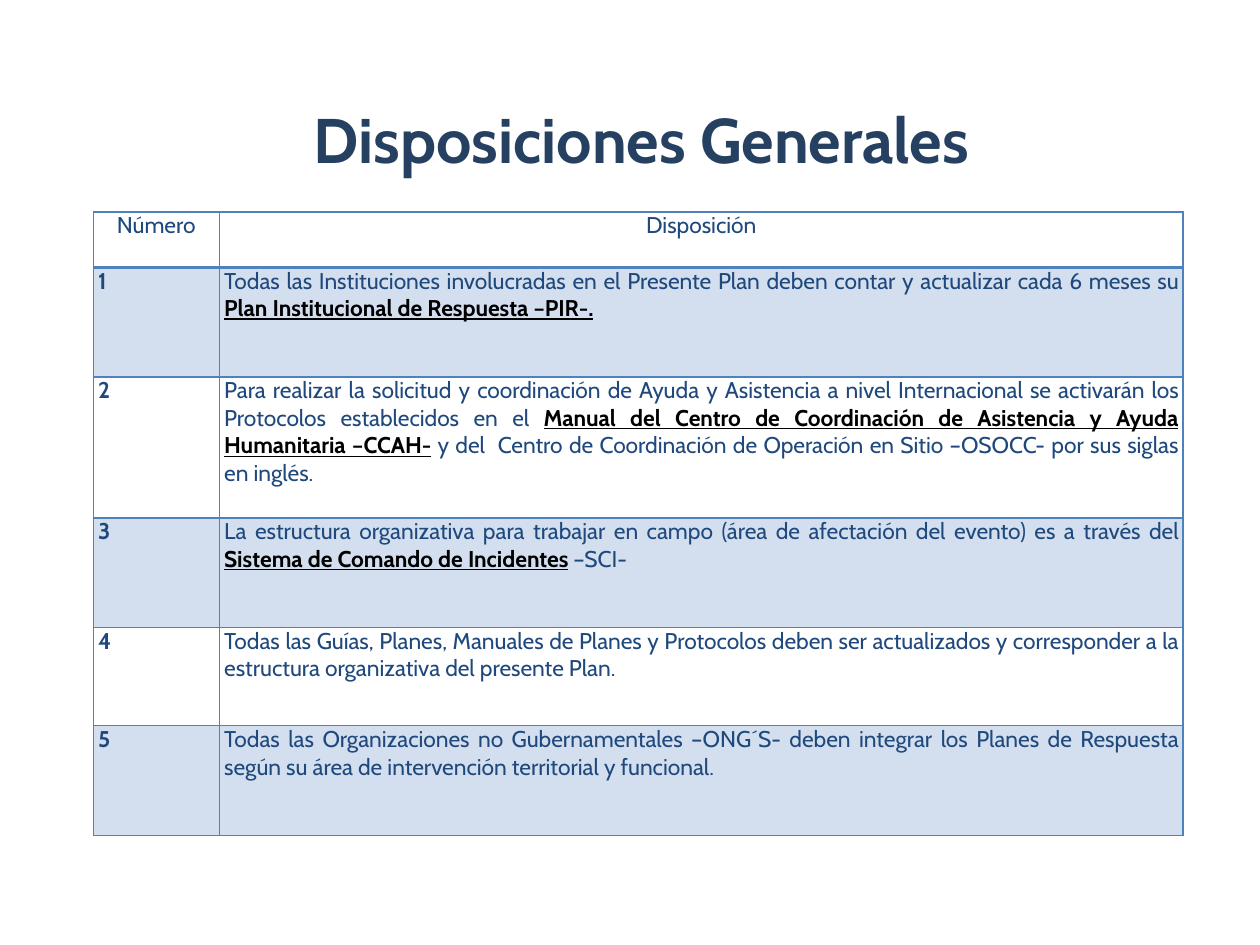
from dataclasses import dataclass

import lxml.etree
import pptx
import pptx.dml.color
import pptx.enum.text
import pptx.oxml.ns
import pptx.util

Cm = pptx.util.Cm
Pt = pptx.util.Pt
ALIGN = pptx.enum.text.PP_ALIGN
ANCHOR = pptx.enum.text.MSO_ANCHOR

COLORS = {
    "title": "254061",
    "text": "1F497D",
    "emphasis": "000000",
    "band": "D3DFEE",
    "border": "4F81BD",
}
FONT = "Cabin"
TITLE_FORMAT = {"name": FONT, "size": Pt(36), "bold": True}
PLAIN_FORMAT = {"name": FONT, "size": Pt(13), "bold": False}
NUMBER_FORMAT = PLAIN_FORMAT | {"bold": True}
EMPHASIS_FORMAT = NUMBER_FORMAT | {"underline": True}
CELL_FORMAT = {
    "margin_left": Cm(0.1),
    "margin_right": Cm(0.1),
    "margin_top": 0,
    "margin_bottom": 0,
    "vertical_anchor": ANCHOR.TOP,
}
COLUMN_WIDTHS = (2.54, 19.43)
HEADER = ("Número", "Disposición")
HEADER_HEIGHT = 1.12
THIN, THICK = Pt(1), Pt(2.25)


@dataclass(frozen=True)
class Provision:
    height: float
    before: str
    emphasis: str = ""
    after: str = ""


PROVISIONS = (
    Provision(
        2.21,
        "Todas las Instituciones involucradas en el Presente Plan deben contar "
        "y actualizar cada 6 meses su ",
        "Plan Institucional de Respuesta –PIR-.",
    ),
    Provision(
        2.84,
        "Para realizar la solicitud y coordinación de Ayuda y Asistencia a nivel "
        "Internacional se activarán los Protocolos establecidos en el ",
        "Manual del Centro de Coordinación de Asistencia y Ayuda Humanitaria –CCAH-",
        " y del  Centro de Coordinación de Operación en Sitio –OSOCC- por sus siglas "
        "en inglés.",
    ),
    Provision(
        2.21,
        "La estructura organizativa para trabajar en campo (área de afectación del "
        "evento) es a través del ",
        "Sistema de Comando de Incidentes",
        " –SCI-",
    ),
    Provision(
        1.98,
        "Todas las Guías, Planes, Manuales de Planes y Protocolos deben ser "
        "actualizados y corresponder a la estructura organizativa del presente Plan.",
    ),
    Provision(
        2.21,
        "Todas las Organizaciones no Gubernamentales –ONG´S- deben integrar los Planes "
        "de Respuesta según su área de intervención territorial y funcional.",
    ),
)


def set_attributes(target: object, values: dict) -> None:
    for name, value in values.items():
        setattr(target, name, value)


def rgb(color: str) -> pptx.dml.color.RGBColor:
    return pptx.dml.color.RGBColor.from_string(COLORS[color])


def add_span(para, text: str, values: dict, color: str) -> None:
    span = para.add_run()
    span.text = text
    set_attributes(span.font, values)
    span.font.color.rgb = rgb(color)


def add_borders(cell, top: int, bottom: int) -> None:
    qn = pptx.oxml.ns.qn
    properties = cell._tc.get_or_add_tcPr()
    for side, width in (("L", THIN), ("R", THIN), ("T", top), ("B", bottom)):
        line = lxml.etree.SubElement(properties, qn(f"a:ln{side}"), w=str(int(width)))
        fill = lxml.etree.SubElement(line, qn("a:solidFill"))
        lxml.etree.SubElement(fill, qn("a:srgbClr"), val=COLORS["border"])


def style_cell(cell, row: int) -> None:
    set_attributes(cell, CELL_FORMAT)
    add_borders(
        cell,
        top=THICK if row == 1 else THIN,
        bottom=THICK if row == 0 else THIN,
    )
    if row % 2:
        cell.fill.solid()
        cell.fill.fore_color.rgb = rgb("band")
    else:
        cell.fill.background()
    cell.text_frame.paragraphs[0].alignment = ALIGN.JUSTIFY if row else ALIGN.CENTER


def fill_provision(number_cell, text_cell, number: int, provision: Provision) -> None:
    add_span(number_cell.text_frame.paragraphs[0], str(number), NUMBER_FORMAT, "text")
    para = text_cell.text_frame.paragraphs[0]
    for text, values, color in (
        (provision.before, PLAIN_FORMAT, "text"),
        (provision.emphasis, EMPHASIS_FORMAT, "emphasis"),
        (provision.after, PLAIN_FORMAT, "text"),
    ):
        if text:
            add_span(para, text, values, color)


def add_title(page) -> None:
    box = page.shapes.title
    set_attributes(
        box, {"left": Cm(1.5), "top": Cm(1.8), "width": Cm(22.86), "height": Cm(1.96)}
    )
    set_attributes(
        box.text_frame,
        {
            "vertical_anchor": ANCHOR.MIDDLE,
            "word_wrap": True,
            "auto_size": pptx.enum.text.MSO_AUTO_SIZE.NONE,
        },
    )
    para = box.text_frame.paragraphs[0]
    para.alignment = ALIGN.CENTER
    add_span(para, "Disposiciones Generales", TITLE_FORMAT, "title")


def add_provisions_table(page) -> None:
    heights = [HEADER_HEIGHT] + [provision.height for provision in PROVISIONS]
    table = page.shapes.add_table(
        len(heights),
        len(COLUMN_WIDTHS),
        Cm(1.88),
        Cm(4.27),
        Cm(sum(COLUMN_WIDTHS)),
        Cm(sum(heights)),
    ).table
    set_attributes(table, {"first_row": False, "horz_banding": False})
    for column, width in zip(table.columns, COLUMN_WIDTHS):
        column.width = Cm(width)
    for index, height in enumerate(heights):
        table.rows[index].height = Cm(height)
        for cell in table.rows[index].cells:
            style_cell(cell, index)
    for cell, text in zip(table.rows[0].cells, HEADER):
        add_span(cell.text_frame.paragraphs[0], text, PLAIN_FORMAT, "text")
    for number, provision in enumerate(PROVISIONS, start=1):
        fill_provision(table.cell(number, 0), table.cell(number, 1), number, provision)


def main() -> None:
    deck = pptx.Presentation()
    set_attributes(deck, {"slide_width": Cm(25.4), "slide_height": Cm(19.05)})
    page = deck.slides.add_slide(deck.slide_layouts.get_by_name("Title Only"))
    add_title(page)
    add_provisions_table(page)
    deck.save("out.pptx")


if __name__ == "__main__":
    main()
